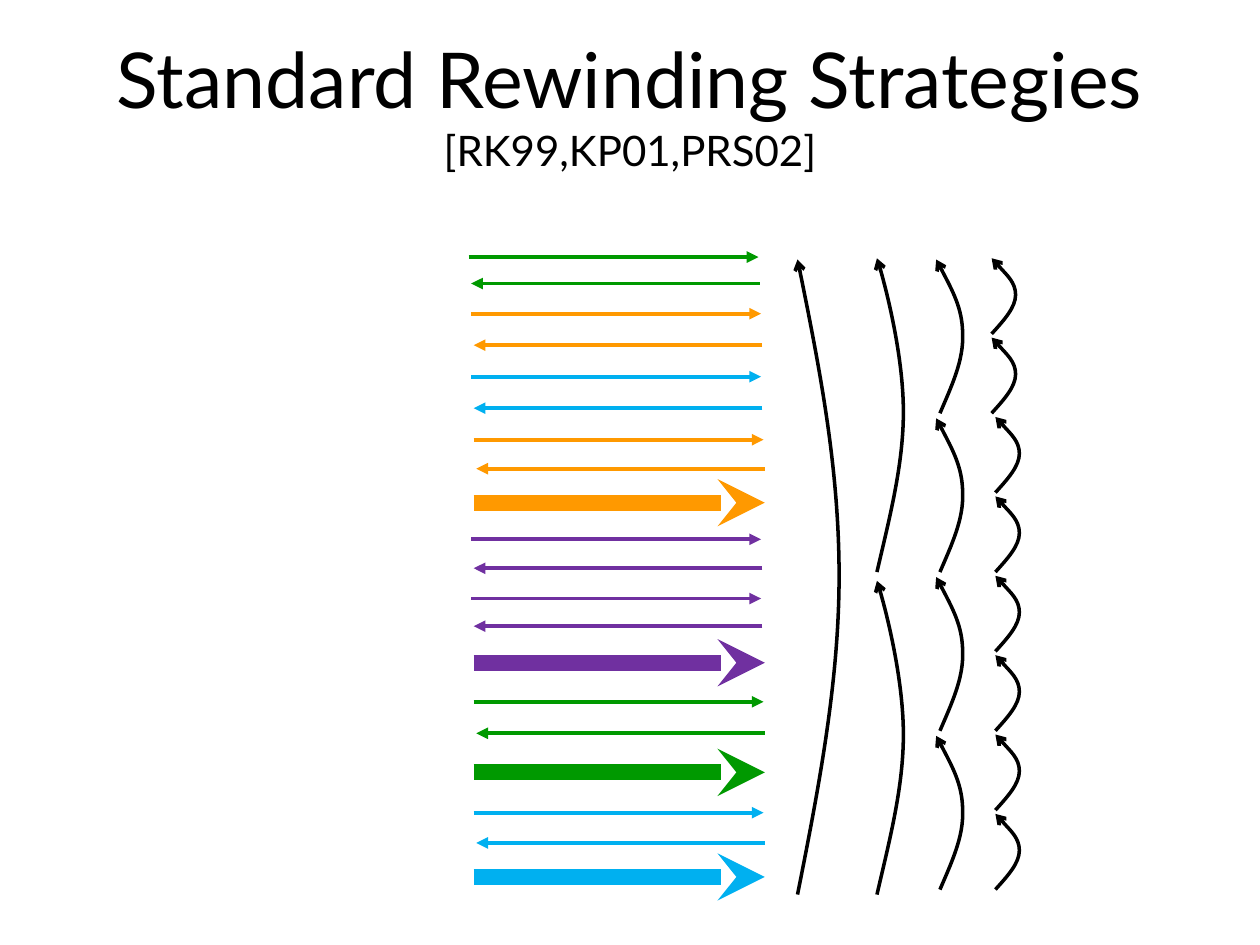
import pptx
import pptx.dml.color
import pptx.enum.shapes
import pptx.enum.text
import pptx.oxml
import pptx.oxml.ns
import pptx.util
from pptx.util import Inches

COLORS = {
    "black": "000000",
    "green": "009900",
    "orange": "FF9900",
    "blue": "00B0F0",
    "purple": "7030A0",
}
qn = pptx.oxml.ns.qn
NAMESPACE = pptx.oxml.ns.nsdecls("a")


def style_arrow(shape, color, width, tip):
    """Colour the line and put an arrowhead at its end."""
    shape.line.color.rgb = pptx.dml.color.RGBColor.from_string(COLORS[color])
    shape.line.width = pptx.util.Pt(width)
    shape.line._get_or_add_ln().append(
        pptx.oxml.parse_xml(f'<a:tailEnd {NAMESPACE} type="{tip}"/>'))


def add_message(start_x, end_x, y, color, width=2.25, tip="triangle"):
    message = page.shapes.add_connector(
        pptx.enum.shapes.MSO_CONNECTOR.STRAIGHT,
        Inches(start_x), Inches(y), Inches(end_x), Inches(y))
    style_arrow(message, color, width, tip)
    message._element.spPr.append(
        pptx.oxml.parse_xml(f"<a:effectLst {NAMESPACE}/>"))


deck = pptx.Presentation()
deck.slide_width, deck.slide_height = Inches(10), Inches(7.5)
page = deck.slides.add_slide(deck.slide_layouts[6])

# Title
box = page.shapes.add_textbox(Inches(0), Inches(0.07), Inches(10), Inches(1.5))
frame = box.text_frame
frame.word_wrap = True
frame.vertical_anchor = pptx.enum.text.MSO_ANCHOR.MIDDLE
frame.text = "Standard Rewinding Strategies\n[RK99,KP01,PRS02]"
for para, size in zip(frame.paragraphs, (44, 24)):
    para.alignment = pptx.enum.text.PP_ALIGN.CENTER
    para.font.name = "Lato"
    para.font.size = pptx.util.Pt(size)
    para.font.color.rgb = pptx.dml.color.RGBColor.from_string(COLORS["black"])

# Message pairs: left edge, height of the message, height of the reply
exchanges = [
    (3.72, 2.04, 2.25, "green"),
    (3.74, 2.49, 2.74, "orange"),
    (3.74, 2.99, 3.24, "blue"),
    (3.76, 3.49, 3.72, "orange"),
    (3.74, 4.28, 4.51, "purple"),
    (3.74, 4.75, 4.97, "purple"),
    (3.76, 5.57, 5.82, "green"),
    (3.76, 6.45, 6.69, "blue"),
]
for left, message_y, reply_y, color in exchanges:
    add_message(left, left + 2.3, message_y, color)
    add_message(left + 2.31, left + 0.02, reply_y, color)

# Thick arrows that close each session
for y, color in [(3.99, "orange"), (5.26, "purple"), (6.13, "green"), (6.96, "blue")]:
    add_message(3.76, 6.07, y, color, width=9, tip="stealth")

# Rewinds: start points, then two Bezier segments as offsets from the start
rewinds = [
    ([(7.87 if i < 2 else 7.9, 2.65 + 0.63 * i) for i in range(8)],
     [(0.1, -0.11), (0.19, -0.21), (0.19, -0.31),
      (0.19, -0.41), (0, -0.6), (0, -0.6)]),
    ([(7.46, 3.28 + 1.26 * i) for i in range(4)],
     [(0.09, -0.21), (0.19, -0.42), (0.18, -0.63),
      (0.18, -0.83), (0.07, -1.03), (-0.03, -1.22)]),
    ([(6.96, 4.54), (6.96, 7.1)],
     [(0.1, -0.43), (0.21, -0.85), (0.21, -1.27),
      (0.21, -1.68), (0.06, -2.32), (0, -2.49)]),
    ([(6.33, 7.1)],
     [(0.17, -0.85), (0.33, -1.69), (0.33, -2.53),
      (0.33, -3.38), (0.17, -4.21), (0, -5.04)]),
]
for starts, offsets in rewinds:
    for x, y in starts:
        builder = page.shapes.build_freeform(Inches(x), Inches(y))
        builder.add_line_segments(
            [(Inches(x + dx), Inches(y + dy)) for dx, dy in offsets], close=False)
        rewind = builder.convert_to_shape()
        rewind.fill.background()
        rewind.shadow.inherit = False
        style_arrow(rewind, "black", 2, "arrow")
        # Turn each three straight segments into one Bezier segment
        segments = list(rewind._element.iter(qn("a:lnTo")))
        outline = segments[0].getparent()
        for first in (0, 3):
            curve = pptx.oxml.parse_xml(f"<a:cubicBezTo {NAMESPACE}/>")
            for segment in segments[first:first + 3]:
                curve.append(segment[0])
                outline.remove(segment)
            outline.append(curve)

deck.save("out.pptx")
